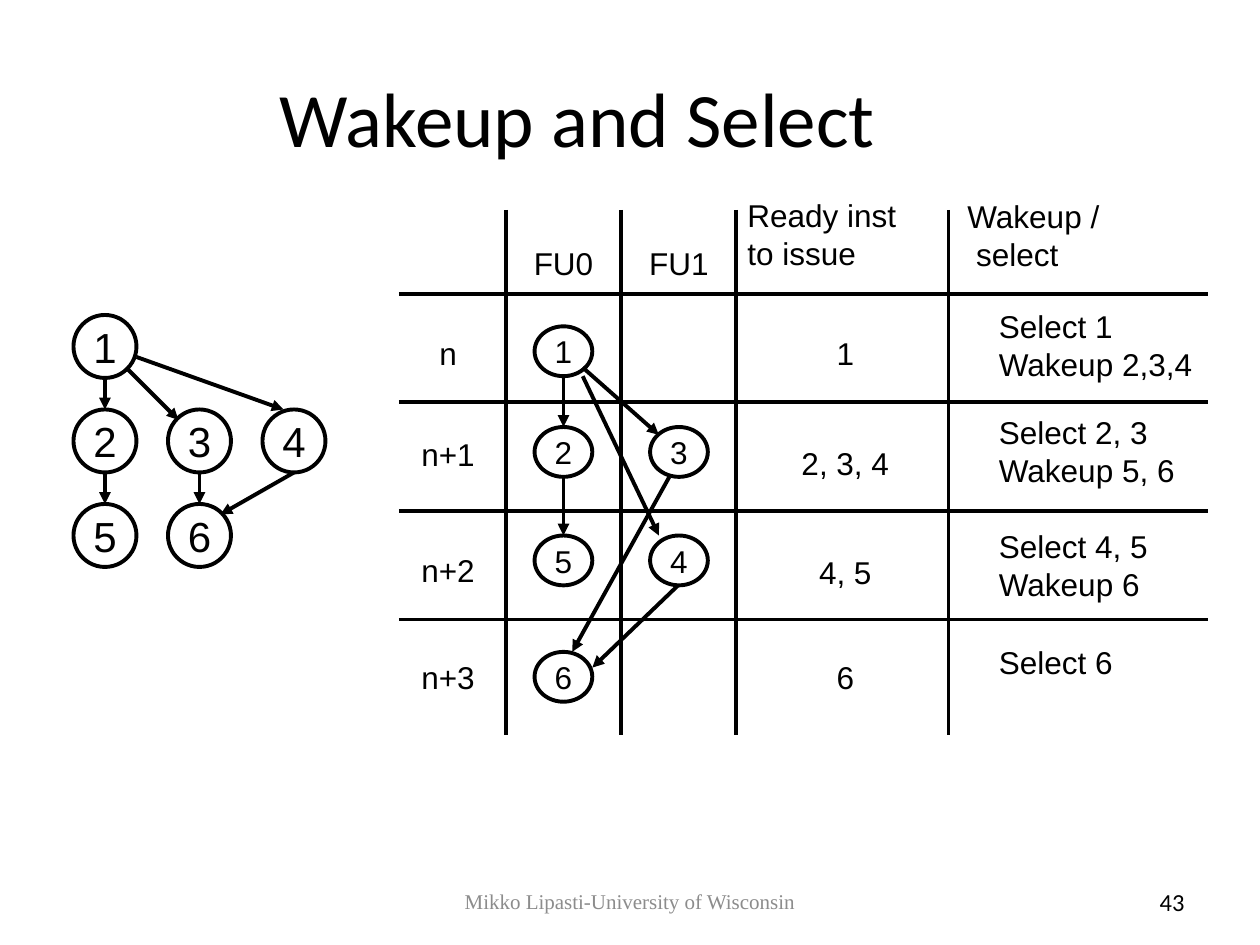
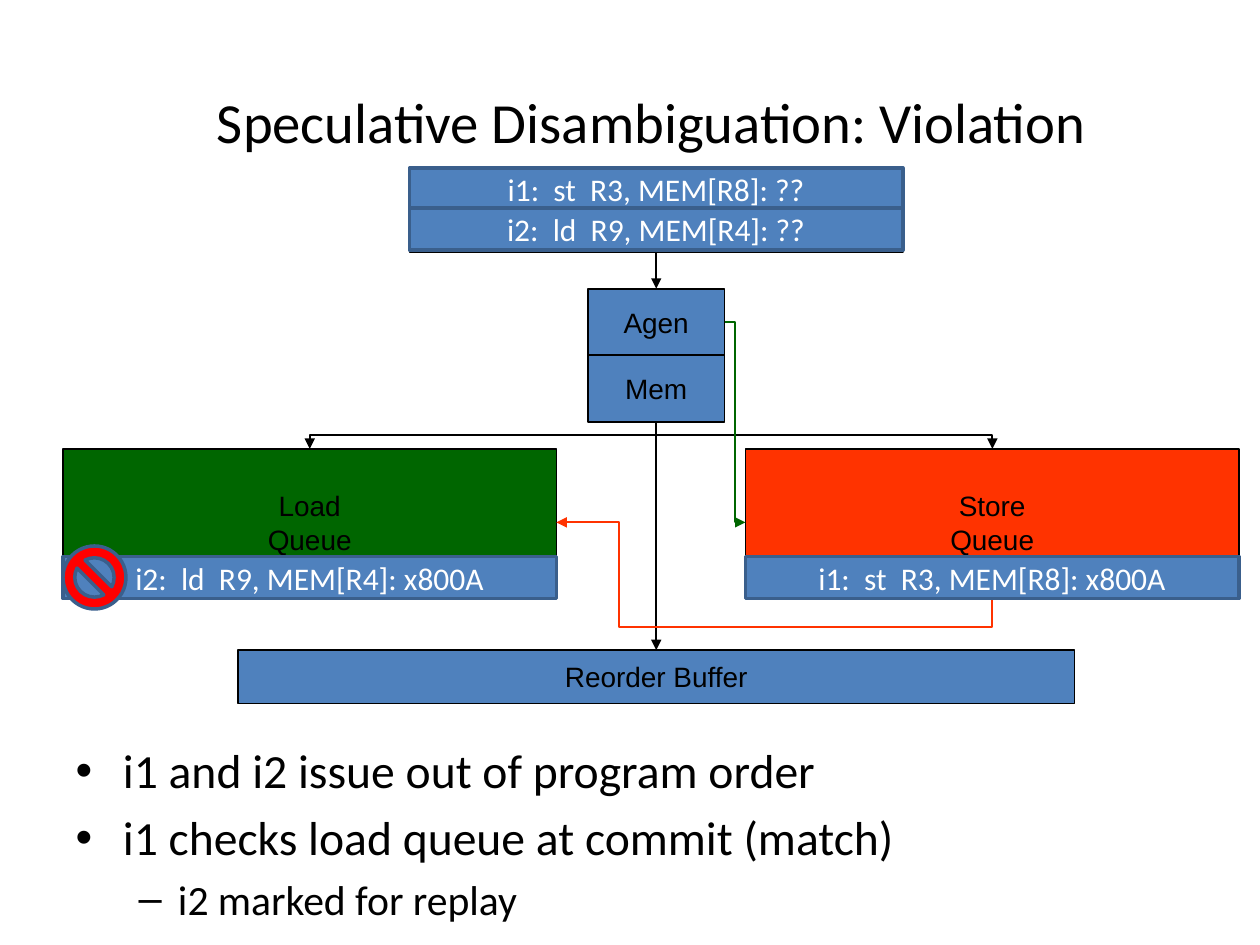
import pptx
import pptx.dml.color
import pptx.enum.shapes
import pptx.enum.text
import pptx.oxml.ns
import pptx.util
from lxml import etree

Pt = pptx.util.Pt
RGBColor = pptx.dml.color.RGBColor
Preset = pptx.enum.shapes.MSO_SHAPE
Connector = pptx.enum.shapes.MSO_CONNECTOR
Align = pptx.enum.text.PP_ALIGN
Anchor = pptx.enum.text.MSO_ANCHOR
AutoSize = pptx.enum.text.MSO_AUTO_SIZE
qn = pptx.oxml.ns.qn

COLORS = {
    "black": "000000",
    "white": "FFFFFF",
    "grey": "8C8C8C",
    "blue": "4F81BD",
    "dark blue": "3A5F8C",
    "green": "006600",
    "orange": "FF3300",
    "red": "FF0000",
}


def add_box(shapes, preset, left, top, width, height, text="", size=18, font="Arial",
            color="black", fill=None, line="black", weight=1.0, align=Align.CENTER):
    """Add a preset shape, or a plain text box when preset is None."""
    frame = [Pt(value) for value in (left, top, width, height)]
    if preset is None:
        shape = shapes.add_textbox(*frame)
    else:
        shape = shapes.add_shape(preset, *frame)
        shape.shadow.inherit = False
        shape.line.color.rgb = RGBColor.from_string(COLORS[line])
        shape.line.width = Pt(weight)
        if fill:
            shape.fill.solid()
            shape.fill.fore_color.rgb = RGBColor.from_string(COLORS[fill])
        else:
            shape.fill.background()
    text_frame = shape.text_frame
    text_frame.word_wrap = preset != Preset.OVAL
    text_frame.vertical_anchor = Anchor.MIDDLE
    if text:
        text_frame.text = text
        for paragraph in text_frame.paragraphs:
            paragraph.alignment = align
            paragraph.font.name = font
            paragraph.font.size = Pt(size)
            paragraph.font.color.rgb = RGBColor.from_string(COLORS[color])
    return shape


def add_line(shapes, start, end, color="black", weight=2.25, arrow=True,
             kind=Connector.STRAIGHT, leaves_vertically=False):
    """Add a line; an elbow that leaves vertically is a horizontal one, rotated."""
    (x1, y1), (x2, y2) = start, end
    rotation = 0
    if leaves_vertically:
        leftward = x2 < x1
        rotation = 90 if leftward else 270
        flipped = (y2 > y1) != leftward
        center_x, center_y = (x1 + x2) / 2, (y1 + y2) / 2
        half_width, half_height = abs(y2 - y1) / 2, abs(x2 - x1) / 2
        x1, x2 = center_x - half_width, center_x + half_width
        y1, y2 = center_y - half_height, center_y + half_height
        if flipped:
            x1, x2 = x2, x1
    connector = shapes.add_connector(kind, Pt(x1), Pt(y1), Pt(x2), Pt(y2))
    connector.line.color.rgb = RGBColor.from_string(COLORS[color])
    connector.line.width = Pt(weight)
    properties = connector.element.spPr
    if rotation:
        properties.find(qn("a:xfrm")).set("rot", str(rotation * 60000))
    if arrow:
        etree.SubElement(connector.line._get_or_add_ln(), qn("a:tailEnd"), type="triangle")
    etree.SubElement(properties, qn("a:effectLst"))
    return connector


presentation = pptx.Presentation()
presentation.slide_width = Pt(720)
presentation.slide_height = Pt(540)

# Slides with their titles: layout number, title, size, frame
slides = []
for layout, title, size, frame in [
    (5, "Wakeup and Select", 44, (36, 21.6, 588, 90)),
    (1, "Speculative Disambiguation: Violation", 32.4, (54, 48, 636.5, 42)),
]:
    slide = presentation.slides.add_slide(presentation.slide_layouts[layout])
    shape = slide.shapes.title
    shape.left, shape.top, shape.width, shape.height = [Pt(value) for value in frame]
    shape.text_frame.text = title
    shape.text_frame.auto_size = AutoSize.NONE
    shape.text_frame.vertical_anchor = Anchor.MIDDLE
    paragraph = shape.text_frame.paragraphs[0]
    paragraph.alignment = Align.CENTER
    paragraph.font.name = "Calibri"
    paragraph.font.size = Pt(size)
    paragraph.font.color.rgb = RGBColor.from_string(COLORS["black"])
    slides.append(slide)
wakeup_slide, violation_slide = slides

# Wakeup and Select: schedule grid
schedule = wakeup_slide.shapes.add_group_shape().shapes
for x in (289, 355, 420.5, 542):
    add_line(schedule, (x, 120), (x, 420), arrow=False)
for row in range(4):
    y = 168 + 62 * row
    add_line(schedule, (228, y), (690.5, y), arrow=False)

unit_centers = (322, 388)
for unit, center in enumerate(unit_centers):
    add_box(schedule, None, center - 30, 135.5, 60, 29, f"FU{unit}")
add_box(schedule, None, 420, 108, 100, 51, "Ready inst\nto issue", align=Align.LEFT)
heading = add_box(schedule, None, 545.75, 108.5, 91, 51, "Wakeup /\nselect", align=Align.LEFT)
heading.text_frame.paragraphs[1]._p.get_or_add_pPr().set("marL", str(Pt(5)))

# Cycle and its top, ready instructions and top, actions with top and height
for cycle, cycle_top, ready, ready_top, actions, actions_top, actions_height in [
    ("n", 187.2, "1", 187.2, "Select 1\nWakeup 2,3,4", 171.4, 51),
    ("n+1", 245, "2, 3, 4", 250, "Select 2, 3\nWakeup 5, 6", 232, 51),
    ("n+2", 311, "4, 5", 312, "Select 4, 5\nWakeup 6", 297.5, 51),
    ("n+3", 372.2, "6", 372.2, "Select 6", 363.6, 29),
]:
    add_box(schedule, None, 226, cycle_top, 60, 29, cycle)
    add_box(schedule, None, 438, ready_top, 90, 29, ready)
    add_box(schedule, None, 563.75, actions_top, 132.5, actions_height, actions,
            align=Align.LEFT)

for instruction, unit, top in [
    (1, 0, 186.5), (2, 0, 244), (3, 1, 244), (5, 0, 306), (4, 1, 306), (6, 0, 372.5),
]:
    add_box(schedule, Preset.OVAL, unit_centers[unit] - 16.5, top, 33, 28.5,
            str(instruction), weight=2.25)
for start, end in [
    ((322, 215), (322, 244)),
    ((333, 210), (376.5, 248.5)),
    ((333, 215), (376.5, 306)),
    ((322, 272.5), (322, 306)),
    ((387.5, 334.5), (338.5, 381.5)),
    ((382.5, 272.5), (327, 372.5)),
]:
    add_line(schedule, start, end)

# Dependence graph on a grid of 54 points
graph = wakeup_slide.shapes.add_group_shape().shapes
for instruction, column, row in [
    (1, 0, 0), (2, 0, 1), (3, 1, 1), (4, 2, 1), (5, 0, 2), (6, 1, 2),
]:
    add_box(graph, Preset.OVAL, 42 + 54 * column, 180 + 54 * row, 36, 36,
            str(instruction), size=24, weight=2.25)
for start, end in [
    ((60, 216), (60, 234)),
    ((72, 210), (102, 240)),
    ((78, 204), (162, 234)),
    ((60, 270), (60, 288)),
    ((114, 270), (114, 288)),
    ((168, 270), (126, 294)),
]:
    add_line(graph, start, end)

add_box(wakeup_slide.shapes, None, 246, 500.5, 228, 29, "Mikko Lipasti-University of Wisconsin",
        size=12, font="Times New Roman", color="grey")
add_box(wakeup_slide.shapes, None, 600, 500.5, 84, 29, "43", size=14, font="Calibri",
        align=Align.RIGHT)

# Speculative Disambiguation: pipeline blocks
shapes = violation_slide.shapes
for text, left, top, width, height, fill in [
    ("Load\nQueue", 36, 256.5, 282, 84, "green"),
    ("Store\nQueue", 426, 256.5, 282, 84, "orange"),
    ("", 234, 96, 282, 48, "blue"),
    ("Agen", 336, 165, 78, 38, "blue"),
    ("Reorder Buffer", 136, 371.5, 478, 30.5, "blue"),
    ("Mem", 336, 203, 78, 38, "blue"),
]:
    add_box(shapes, Preset.RECTANGLE, left, top, width, height, text, size=16, fill=fill)

add_line(shapes, (375, 144), (375, 165), weight=1)
memory_exit = (375, 241)
add_line(shapes, memory_exit, (375, 371.5), weight=1)
for queue_center in (567, 177):
    add_line(shapes, memory_exit, (queue_center, 256.5), weight=1,
             kind=Connector.ELBOW, leaves_vertically=True)
violation = add_line(shapes, (567, 340.5), (318, 298.5), "orange", 1,
                     kind=Connector.ELBOW, leaves_vertically=True)
geometry = violation.element.spPr.find(qn("a:prstGeom"))
geometry.set("prst", "bentConnector4")
for name, value in (("adj1", -42800), ("adj2", 85600)):
    etree.SubElement(geometry.find(qn("a:avLst")), qn("a:gd"), name=name, fmla=f"val {value}")
add_line(shapes, (414, 184), (426, 298.5), "green", 1, kind=Connector.ELBOW)

for text, left, top in [
    ("i1:  st  R3, MEM[R8]: ??", 234, 96),
    ("i2:  ld  R9, MEM[R4]: ??", 234, 119),
    ("i1:  st  R3, MEM[R8]: x800A", 426, 318),
    ("i2:  ld  R9, MEM[R4]: x800A", 36, 318),
]:
    add_box(shapes, Preset.RECTANGLE, left, top, 282, 24, text, font="Calibri",
            color="white", fill="blue", line="dark blue", weight=2)
add_box(shapes, Preset.NO_SYMBOL, 36, 312, 36, 36, fill="red", line="dark blue", weight=2)

# Bullets
body = violation_slide.placeholders[1]
body.left, body.top, body.width, body.height = Pt(36), Pt(420), Pt(648), Pt(96)
body.text_frame.text = "\n".join([
    "i1 and i2 issue out of program order",
    "i1 checks load queue at commit (match)",
    "i2 marked for replay",
])
body.text_frame.auto_size = AutoSize.NONE
for paragraph, level, size in zip(body.text_frame.paragraphs, (0, 0, 1), (27.2, 27.2, 23.8)):
    paragraph.level = level
    paragraph.font.name = "Calibri"
    paragraph.font.size = Pt(size)
    paragraph.font.color.rgb = RGBColor.from_string(COLORS["black"])
body.text_frame.paragraphs[0].space_before = Pt(0)

presentation.save("out.pptx")
